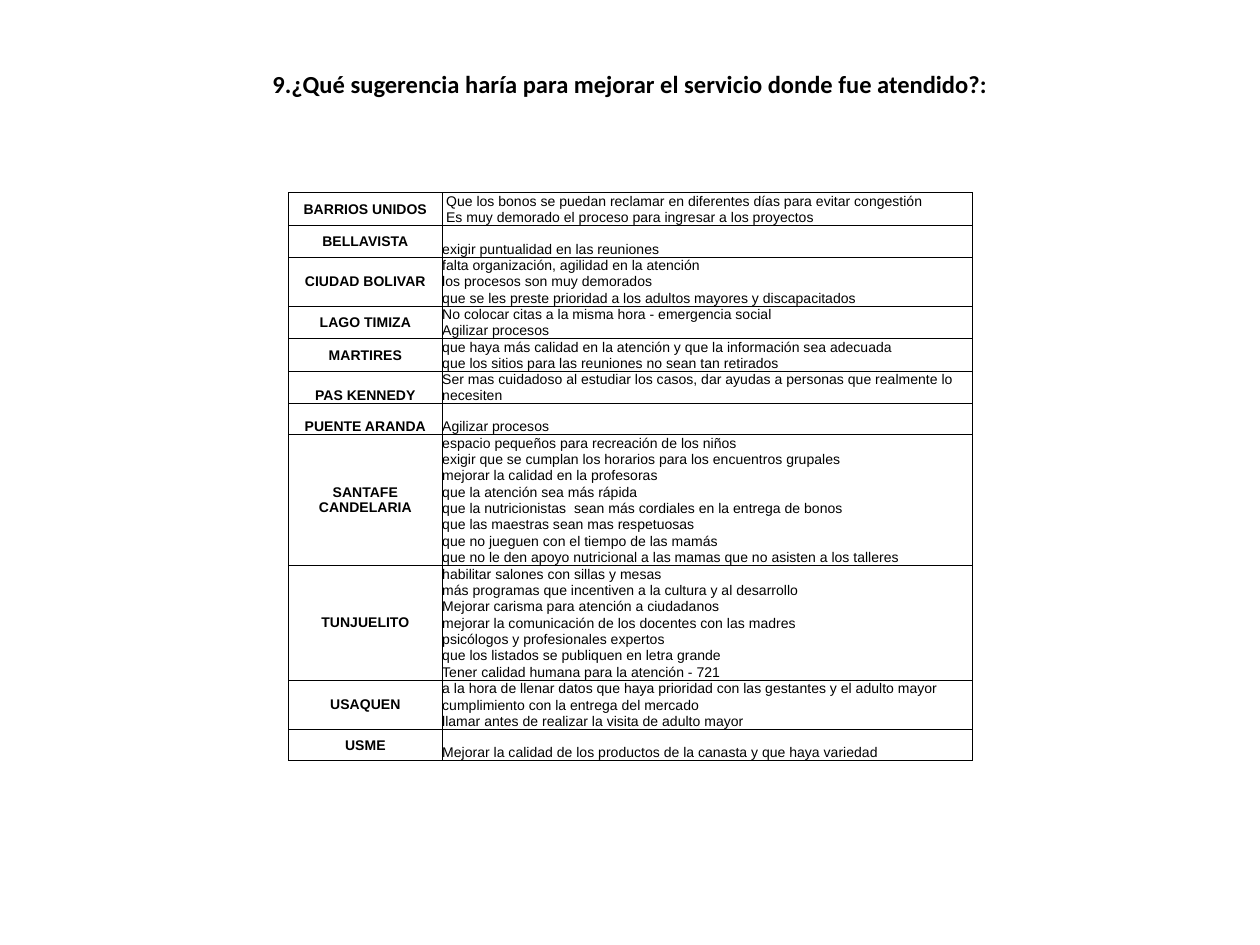
from lxml import etree
from pptx import Presentation
from pptx.dml.color import RGBColor
from pptx.enum.text import MSO_ANCHOR, PP_ALIGN
from pptx.oxml.ns import qn
from pptx.util import Inches, Pt

CENTER, LEFT = PP_ALIGN.CENTER, PP_ALIGN.LEFT
MIDDLE, BOTTOM = MSO_ANCHOR.MIDDLE, MSO_ANCHOR.BOTTOM
COLORS = {"ink": "000000"}
TITLE = "9.¿Qué sugerencia haría para mejorar el servicio donde fue atendido?:"
COLUMN_WIDTHS = (1.22, 4.21)
LINE_HEIGHT = 0.13
SINGLE_HEIGHT = 0.25
LOW_LABELS = ("PAS KENNEDY", "PUENTE ARANDA")
SUGGESTIONS = {
    "BARRIOS UNIDOS": [
        " Que los bonos se puedan reclamar en diferentes días para evitar congestión",
        " Es muy demorado el proceso para ingresar a los proyectos",
    ],
    "BELLAVISTA": ["exigir puntualidad en las reuniones"],
    "CIUDAD BOLIVAR": [
        "falta organización, agilidad en la atención",
        "los procesos son muy demorados",
        "que se les preste prioridad a los adultos mayores y discapacitados",
    ],
    "LAGO TIMIZA": [
        "No colocar citas a la misma hora - emergencia social",
        "Agilizar procesos",
    ],
    "MARTIRES": [
        "que haya más calidad en la atención y que la información sea adecuada",
        "que los sitios para las reuniones no sean tan retirados",
    ],
    "PAS KENNEDY": [
        "Ser mas cuidadoso al estudiar los casos, dar ayudas a personas que realmente lo necesiten",
    ],
    "PUENTE ARANDA": ["Agilizar procesos"],
    "SANTAFE CANDELARIA": [
        "espacio pequeños para recreación de los niños",
        "exigir que se cumplan los horarios para los encuentros grupales",
        "mejorar la calidad en la profesoras",
        "que la atención sea más rápida",
        "que la nutricionistas  sean más cordiales en la entrega de bonos",
        "que las maestras sean mas respetuosas",
        "que no jueguen con el tiempo de las mamás",
        "que no le den apoyo nutricional a las mamas que no asisten a los talleres",
    ],
    "TUNJUELITO": [
        "habilitar salones con sillas y mesas",
        "más programas que incentiven a la cultura y al desarrollo",
        "Mejorar carisma para atención a ciudadanos",
        "mejorar la comunicación de los docentes con las madres",
        "psicólogos y profesionales expertos",
        "que los listados se publiquen en letra grande",
        "Tener calidad humana para la atención - 721",
    ],
    "USAQUEN": [
        "a la hora de llenar datos que haya prioridad con las gestantes y el adulto mayor",
        "cumplimiento con la entrega del mercado",
        "llamar antes de realizar la visita de adulto mayor",
    ],
    "USME": ["Mejorar la calidad de los productos de la canasta y que haya variedad"],
}


def style_span(span, font_name, size, bold):
    """Give a run its font, size, weight and colour."""
    span.font.name = font_name
    span.font.size = Pt(size)
    span.font.bold = bold
    span.font.color.rgb = RGBColor.from_string(COLORS["ink"])


def add_title(page):
    """Place and format the question in the title placeholder."""
    title = page.shapes.title
    title.left, title.top = Inches(0.69), Inches(0.4)
    title.width, title.height = Inches(8.62), Inches(0.56)
    title.text_frame.text = TITLE
    title.text_frame.vertical_anchor = MIDDLE
    para = title.text_frame.paragraphs[0]
    para.alignment = CENTER
    para.line_spacing = 0.9
    style_span(para.runs[0], "Calibri", 14, True)


def set_borders(cell, top, bottom):
    """Draw the side borders, and the top and bottom ones where asked."""
    properties = cell._tc.get_or_add_tcPr()
    edges = (("a:lnL", True), ("a:lnR", True), ("a:lnT", top), ("a:lnB", bottom))
    for position, (tag, visible) in enumerate(edges):
        line = etree.Element(qn(tag), w=str(Pt(0.5)))
        properties.insert(position, line)
        if visible:
            fill = etree.SubElement(line, qn("a:solidFill"))
            etree.SubElement(fill, qn("a:srgbClr"), val=COLORS["ink"])
        else:
            etree.SubElement(line, qn("a:noFill"))


def fill_cell(cell, text, alignment, anchor, bold):
    """Write one table cell without inner margins."""
    cell.margin_left = cell.margin_right = cell.margin_top = cell.margin_bottom = 0
    cell.vertical_anchor = anchor
    cell.fill.background()
    para = cell.text_frame.paragraphs[0]
    para.alignment = alignment
    if text:
        para.text = text
        style_span(para.runs[0], "Arial", 8, bold)
    else:
        etree.SubElement(para._p, qn("a:endParaRPr"), sz="800")


def add_group(table, first, label, lines):
    """Fill the rows of one locality and merge its label cells."""
    last = first + len(lines) - 1
    label_anchor = BOTTOM if label in LOW_LABELS else MIDDLE
    for row, line in enumerate(lines, first):
        table.rows[row].height = Inches(SINGLE_HEIGHT if first == last else LINE_HEIGHT)
        fill_cell(table.cell(row, 0), label if row == first else "", CENTER, label_anchor, True)
        fill_cell(table.cell(row, 1), line, LEFT, BOTTOM, False)
        for column in range(2):
            set_borders(table.cell(row, column), row == first, row == last)
    if last > first:
        table.cell(first, 0).merge(table.cell(last, 0))


def add_suggestions(page):
    """Build the table of suggestions by locality."""
    count = sum(len(lines) for lines in SUGGESTIONS.values())
    frame = page.shapes.add_table(
        count, 2, Inches(2.29), Inches(1.53),
        Inches(sum(COLUMN_WIDTHS)), Inches(count * LINE_HEIGHT),
    )
    table = frame.table
    table.first_row = table.horz_banding = False
    for column, width in zip(table.columns, COLUMN_WIDTHS):
        column.width = Inches(width)
    first = 0
    for label, lines in SUGGESTIONS.items():
        add_group(table, first, label, lines)
        first += len(lines)


def main():
    """Build and save the deck."""
    deck = Presentation()
    deck.slide_width, deck.slide_height = Inches(10), Inches(7.5)
    page = deck.slides.add_slide(deck.slide_layouts[5])
    add_title(page)
    add_suggestions(page)
    deck.save("out.pptx")


if __name__ == "__main__":
    main()
